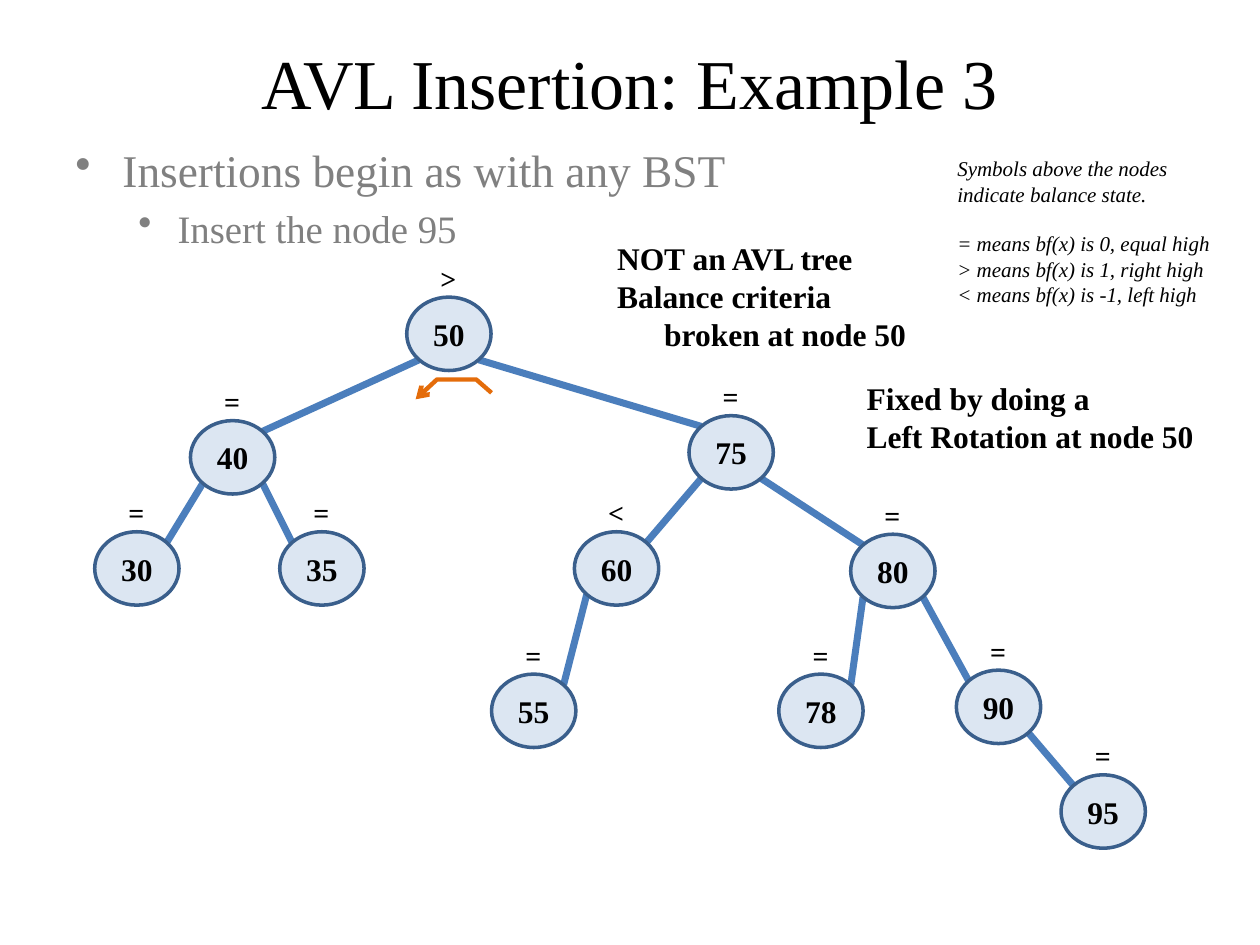
from typing import NamedTuple

from pptx import Presentation
from pptx.dml.color import RGBColor
from pptx.enum.shapes import MSO_CONNECTOR as Conn, MSO_SHAPE as Shape
from pptx.enum.text import MSO_ANCHOR as Anchor, PP_ALIGN as Align
from pptx.oxml.ns import qn
from pptx.util import Cm, Pt
from lxml.etree import SubElement

FONT = "Times New Roman"
COLORS = {
    "text": "000000",
    "muted": "808080",
    "node": "DCE6F2",
    "outline": "3A5F8C",
    "edge": "4B7EBC",
    "rotation": "E46C0A",
}
NODE_W, NODE_H = 1.7, 1.48
DIAGONAL = 0.354  # offset of an ellipse's 45° point, as a share of its size


class Node(NamedTuple):
    key: int
    balance: str
    left: float
    top: float

    def diagonal_point(self, side: int, vertical: int) -> tuple[float, float]:
        """Outline point toward side (-1 left, 1 right) and vertical (-1 up, 1 down)."""
        return (self.left + NODE_W * (0.5 + side * DIAGONAL),
                self.top + NODE_H * (0.5 + vertical * DIAGONAL))


class Line(NamedTuple):
    text: str
    indent: float = 0
    hanging: float = 0
    before: float = 0
    size: float = 0
    bullet: str = ""


class Note(NamedTuple):
    left: float
    top: float
    width: float
    height: float
    size: float
    lines: list[Line]
    color: str = "text"
    bold: bool = False
    italic: bool = False


NODES = [
    Node(50, ">", 8.2, 5.99),
    Node(40, "=", 3.84, 8.48),
    Node(75, "=", 13.89, 8.38),
    Node(30, "=", 1.91, 10.72),
    Node(35, "=", 5.64, 10.72),
    Node(60, "<", 11.58, 10.72),
    Node(80, "=", 17.15, 10.77),
    Node(55, "=", 9.91, 13.59),
    Node(78, "=", 15.7, 13.59),
    Node(90, "=", 19.28, 13.51),
    Node(95, "=", 21.39, 15.62),
]
EDGES = [(50, 40), (50, 75), (40, 30), (40, 35), (75, 60), (75, 80),
         (60, 55), (80, 78), (80, 90), (90, 95)]
NOTES = [
    Note(1.27, 2.74, 22.86, 2.39, 25.9, [
        Line("Insertions begin as with any BST", 0.95, 0.95, 5.2, bullet="•"),
        Line("Insert the node 95", 2.06, 0.79, 4.4, 22.2, "•"),
    ], color="muted"),
    Note(19.05, 3.02, 5.66, 3.33, 12, [
        Line("Symbols above the nodes"),
        Line("indicate balance state."),
        Line("= means bf(x) is 0, equal high", before=14),
        Line("> means bf(x) is 1, right high"),
        Line("< means bf(x) is -1, left high"),
    ], italic=True),
    Note(12.19, 4.7, 6.4, 2.57, 18, [
        Line("NOT an AVL tree"),
        Line("Balance criteria"),
        Line("broken at node 50", 0.95),
    ], bold=True),
    Note(17.22, 7.52, 7.16, 1.8, 18, [
        Line("Fixed by doing a"),
        Line("Left Rotation at node 50"),
    ], bold=True),
]
ROTATION = [(9.91, 7.92), (9.6, 7.65), (8.81, 7.65), (8.38, 8.05)]


def rgb(name: str) -> RGBColor:
    return RGBColor.from_string(COLORS[name])


def set_font(p, size: float, color: str = "text", bold=False, italic=False) -> None:
    f = p.font
    f.name, f.size, f.bold, f.italic = FONT, Pt(size), bold, italic
    f.color.rgb = rgb(color)


def set_line(s, color: str, width: float) -> None:
    s.line.color.rgb = rgb(color)
    s.line.width = Pt(width)


def add_note(shapes, note: Note) -> None:
    box = shapes.add_textbox(*map(Cm, note[:4]))
    tf = box.text_frame
    tf.word_wrap = False
    for i, line in enumerate(note.lines):
        p = tf.add_paragraph() if i else tf.paragraphs[0]
        p.text = line.text
        p.space_before = Pt(line.before)
        set_font(p, line.size or note.size, note.color, note.bold, note.italic)
        pPr = p._p.get_or_add_pPr()
        pPr.set("marL", str(Cm(line.indent)))
        pPr.set("indent", str(-Cm(line.hanging)))
        if line.bullet:
            bullet = pPr.makeelement(qn("a:buChar"), {"char": line.bullet})
            pPr.find(qn("a:defRPr")).addprevious(bullet)


def add_edge(shapes, parent: Node, child: Node) -> None:
    side = -1 if child.left < parent.left else 1
    start = parent.diagonal_point(side, 1)
    end = child.diagonal_point(-side, -1)
    s = shapes.add_connector(Conn.STRAIGHT, *map(Cm, start + end))
    set_line(s, "edge", 4)
    SubElement(s._element.spPr, qn("a:effectLst"))


def add_node(shapes, node: Node) -> None:
    s = shapes.add_shape(Shape.OVAL, Cm(node.left), Cm(node.top),
                         Cm(NODE_W), Cm(NODE_H))
    s.shadow.inherit = False
    s.fill.solid()
    s.fill.fore_color.rgb = rgb("node")
    set_line(s, "outline", 2)
    tf = s.text_frame
    tf.word_wrap = False
    tf.vertical_anchor = Anchor.MIDDLE
    p = tf.paragraphs[0]
    p.text = str(node.key)
    p.alignment = Align.CENTER
    set_font(p, 18, bold=True)
    add_note(shapes, Note(node.left + 0.43, node.top - 0.85, 0.84, 0.94, 16,
                          [Line(node.balance)], bold=True))


def add_rotation_arrow(shapes) -> None:
    points = [(Cm(x), Cm(y)) for x, y in ROTATION]
    builder = shapes.build_freeform(*points[0])
    builder.add_line_segments(points[1:], close=False)
    s = builder.convert_to_shape()
    s.shadow.inherit = False
    s.fill.background()
    set_line(s, "rotation", 2.5)
    SubElement(s.line._get_or_add_ln(), qn("a:tailEnd"), type="arrow")


def main() -> None:
    prs = Presentation()
    prs.slide_width, prs.slide_height = Cm(25.4), Cm(19.05)
    slide = prs.slides.add_slide(prs.slide_layouts[5])
    shapes = slide.shapes

    title = shapes.title
    title.left, title.top, title.width, title.height = map(Cm, (1.27, 0.76, 22.86, 1.78))
    title.text_frame.vertical_anchor = Anchor.MIDDLE
    p = title.text_frame.paragraphs[0]
    p.text = "AVL Insertion: Example 3"
    p.alignment = Align.CENTER
    set_font(p, 40)

    by_key = {node.key: node for node in NODES}
    for parent, child in EDGES:
        add_edge(shapes, by_key[parent], by_key[child])
    for node in NODES:
        add_node(shapes, node)
    for note in NOTES:
        add_note(shapes, note)
    add_rotation_arrow(shapes)

    prs.save("out.pptx")


if __name__ == "__main__":
    main()
